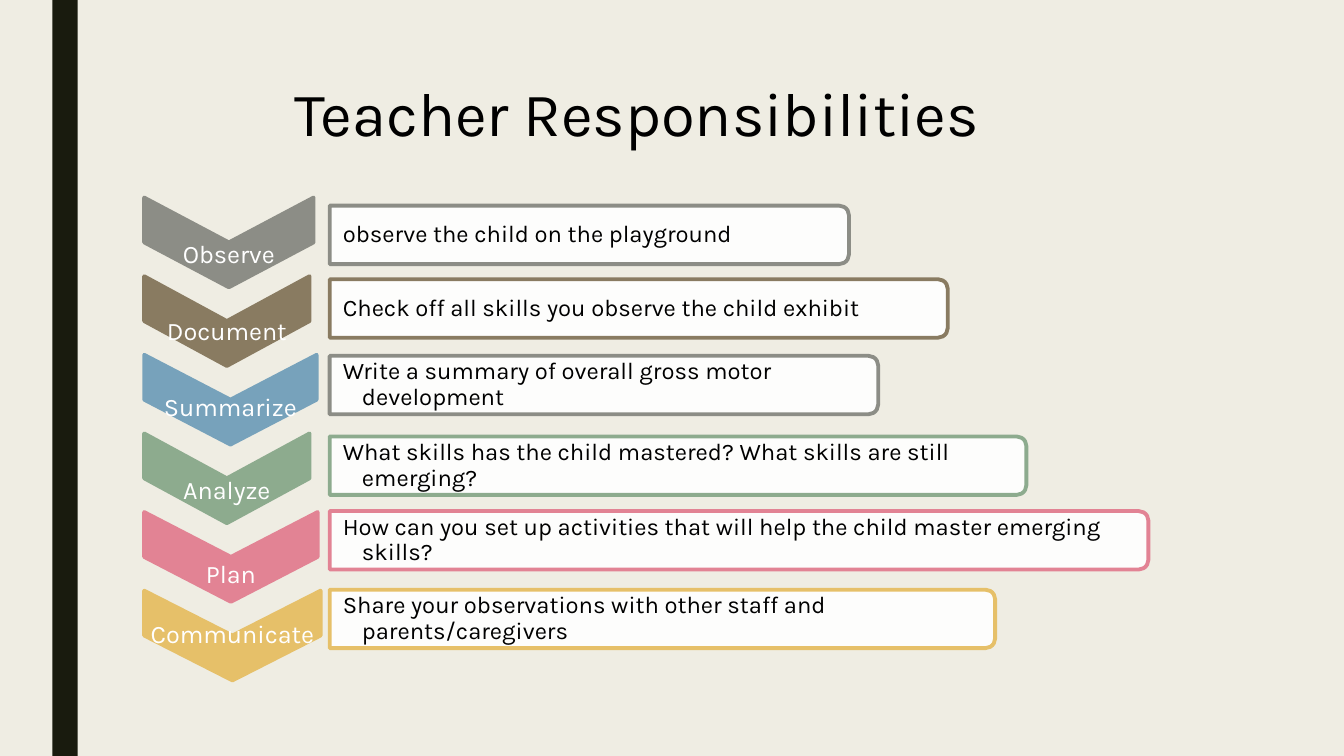
from dataclasses import dataclass
from typing import Any

from lxml import etree
from pptx import Presentation
from pptx import util as u
from pptx.dml import color as c
from pptx.enum import shapes, text
from pptx.oxml import ns
from pptx.shapes import base, shapetree as tree
from pptx.text import text as t

BLACK = c.RGBColor(0x00, 0x00, 0x00)
WHITE = c.RGBColor(0xFF, 0xFF, 0xFF)
CREAM = c.RGBColor(0xEF, 0xED, 0xE3)
DARK = c.RGBColor(0x19, 0x1B, 0x0E)
GREY = c.RGBColor(0x8C, 0x8D, 0x86)
BROWN = c.RGBColor(0x89, 0x7B, 0x61)
BLUE = c.RGBColor(0x77, 0xA2, 0xBB)
GREEN = c.RGBColor(0x8D, 0xAB, 0x8E)
PINK = c.RGBColor(0xE2, 0x83, 0x94)
GOLD = c.RGBColor(0xE6, 0xC0, 0x69)

FACE = "Karla"
LEFT, TOP, PITCH, DEPTH = 1.43, 1.96, 0.78, 0.89
BAR_LEFT, BAR_HIGH = 3.27, 0.58

MID = text.MSO_ANCHOR.MIDDLE
THIN = u.Inches(0.01)
LABEL = {"vertical_anchor": MID, "word_wrap": True, "margin_left": THIN,
         "margin_right": THIN, "margin_top": THIN, "margin_bottom": THIN}
NOTE = {**LABEL, "margin_left": u.Inches(0.13)}
HEAD = {"vertical_anchor": MID, "word_wrap": True, "auto_size": text.MSO_AUTO_SIZE.NONE}
CENTRE = {"alignment": text.PP_ALIGN.CENTER, "line_spacing": 0.9}
FLUSH = {"alignment": text.PP_ALIGN.LEFT, "line_spacing": 0.9, "level": 1}


@dataclass(frozen=True)
class Box:
    left: float
    top: float
    wide: float
    high: float

    def size(self) -> list[int]:
        return [u.Inches(n) for n in (self.left, self.top, self.wide, self.high)]

    def turn(self) -> "Box":
        shift = (self.wide - self.high) / 2
        return Box(self.left + shift, self.top - shift, self.high, self.wide)


@dataclass(frozen=True)
class Step:
    name: str
    task: str
    fill: c.RGBColor
    edge: c.RGBColor
    wide: float
    drop: float
    bar_top: float
    bar_wide: float


STEPS = [
    Step("Observe", "observe the child on the playground",
         GREY, GREY, 1.68, 0.13, 2.04, 5.15),
    Step("Document", "Check off all skills you observe the child exhibit",
         BROWN, BROWN, 1.64, 0.11, 2.77, 6.13),
    Step("Summarize", "Write a summary of overall gross motor development",
         BLUE, GREY, 1.71, 0.09, 3.53, 5.44),
    Step("Analyze", "What skills has the child mastered? What skills are still emerging?",
         GREEN, GREEN, 1.64, 0.13, 4.33, 6.91),
    Step("Plan", "How can you set up activities that will help the child master emerging skills?",
         PINK, PINK, 1.72, 0.18, 5.07, 8.12),
    Step("Communicate", "Share your observations with other staff and parents/caregivers",
         GOLD, GOLD, 1.75, 0, 5.85, 6.6),
]


def apply(part: Any, form: dict[str, Any]) -> None:
    for key, value in form.items():
        setattr(part, key, value)


def write(frame: t.TextFrame, words: str, size: float, ink: c.RGBColor,
          form: dict[str, Any], para: dict[str, Any]) -> None:
    apply(frame, form)
    line = frame.paragraphs[0]
    apply(line, para)
    run = line.add_run()
    run.text = words
    apply(run.font, {"name": FACE, "size": u.Pt(size)})
    run.font.color.rgb = ink


def draw(art: tree.GroupShapes, kind: shapes.MSO_SHAPE, box: Box,
         fill: c.RGBColor, edge: c.RGBColor) -> base.BaseShape:
    shape = art.add_shape(kind, *box.turn().size())
    apply(shape, {"rotation": 90})
    shape.shadow.inherit = False
    shape.fill.solid()
    shape.fill.fore_color.rgb = fill
    shape.line.color.rgb = edge
    shape.line.width = u.Pt(2.75)
    return shape


def fade(shape: base.BaseShape, share: int) -> None:
    tint = shape.fill._xPr.find(ns.qn("a:solidFill"))[0]
    etree.SubElement(tint, ns.qn("a:alpha")).set("val", str(share * 1000))


def hang(frame: t.TextFrame, inset: float) -> None:
    props = frame.paragraphs[0]._p.get_or_add_pPr()
    props.set("marL", str(u.Inches(inset)))
    props.set("indent", str(-u.Inches(inset)))


def add_step(art: tree.GroupShapes, row: int, step: Step) -> None:
    top = TOP + row * PITCH
    arrow = Box(LEFT, top, step.wide, DEPTH)
    draw(art, shapes.MSO_SHAPE.CHEVRON, arrow, step.fill, step.fill)
    label = art.add_textbox(*Box(LEFT, top + step.drop, step.wide, DEPTH).size())
    write(label.text_frame, step.name, 18, WHITE, LABEL, CENTRE)

    bar = Box(BAR_LEFT, step.bar_top, step.bar_wide, BAR_HIGH)
    fade(draw(art, shapes.MSO_SHAPE.ROUND_2_SAME_RECTANGLE, bar, WHITE, step.edge), 90)
    inner = Box(BAR_LEFT, step.bar_top + 0.03, step.bar_wide - 0.03, BAR_HIGH - 0.06)
    note = art.add_textbox(*inner.size())
    write(note.text_frame, step.task, 17, BLACK, NOTE, FLUSH)
    hang(note.text_frame, 0.19)


def main() -> None:
    deck = Presentation()
    apply(deck, {"slide_width": u.Inches(13.33), "slide_height": u.Inches(7.5)})
    slide = deck.slides.add_slide(deck.slide_layouts[5])
    slide.background.fill.solid()
    slide.background.fill.fore_color.rgb = CREAM

    title = slide.shapes.title
    apply(title, dict(zip(("left", "top", "width", "height"),
                          Box(1.22, 0.69, 10.2, 0.84).size())))
    write(title.text_frame, "Teacher Responsibilities", 44, BLACK, HEAD,
          {"alignment": text.PP_ALIGN.CENTER})

    strip = slide.shapes.add_shape(shapes.MSO_SHAPE.RECTANGLE, *Box(0.52, 0, 0.25, 7.5).size())
    strip.shadow.inherit = False
    strip.fill.solid()
    strip.fill.fore_color.rgb = DARK
    strip.line.fill.background()

    art = slide.shapes.add_group_shape().shapes
    for row, step in enumerate(STEPS):
        add_step(art, row, step)
    deck.save("out.pptx")


if __name__ == "__main__":
    main()
